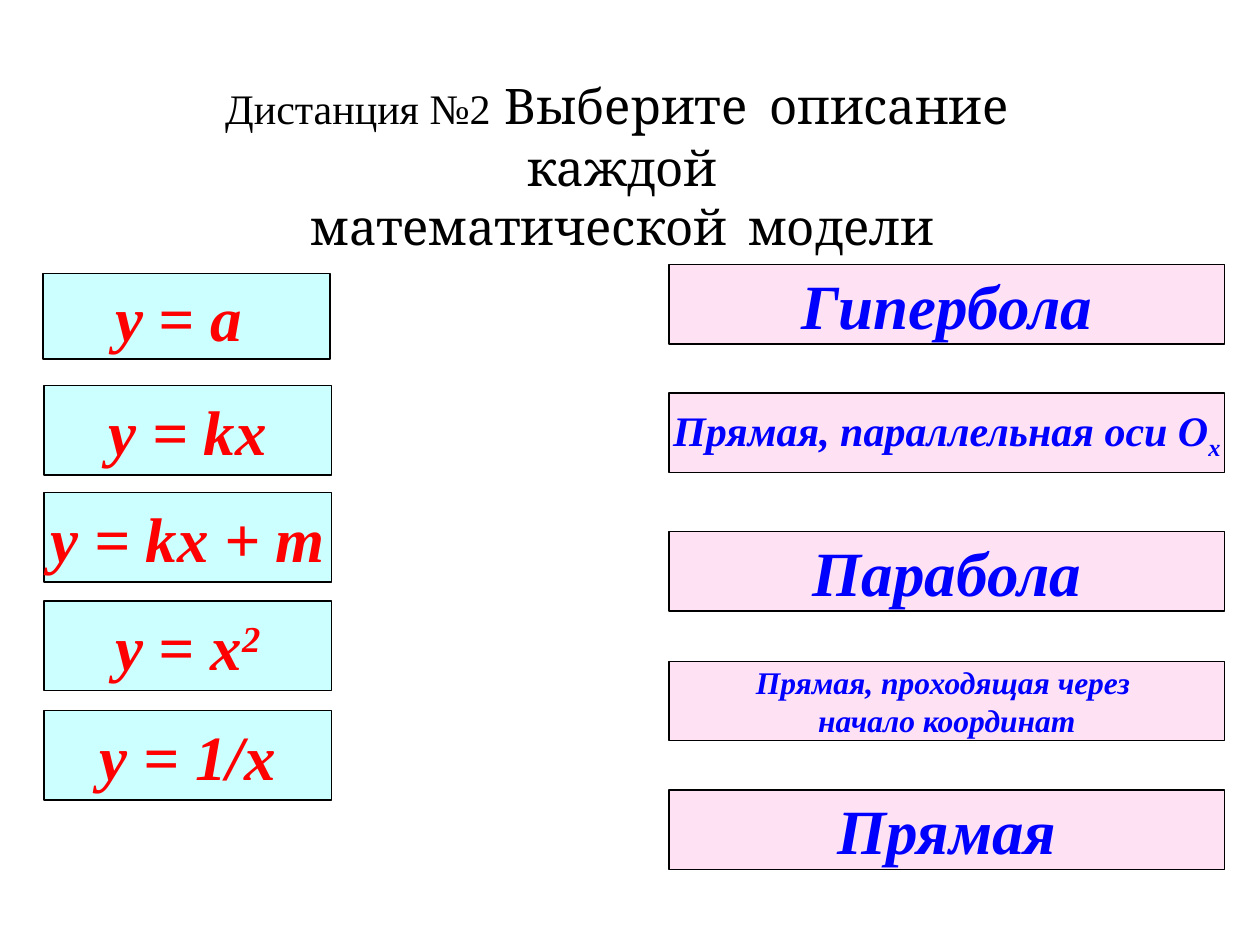
from pptx import Presentation
from pptx.dml.color import RGBColor
from pptx.enum.shapes import MSO_SHAPE
from pptx.enum.text import MSO_ANCHOR, MSO_AUTO_SIZE, PP_ALIGN
from pptx.util import Inches, Pt

BLACK = RGBColor(0x00, 0x00, 0x00)
RED = RGBColor(0xFF, 0x00, 0x00)
BLUE = RGBColor(0x00, 0x00, 0xFF)
CYAN = RGBColor(0xCC, 0xFF, 0xFF)
PINK = RGBColor(0xFE, 0xE2, 0xF4)
CREAM = RGBColor(0xEE, 0xEC, 0xE1)

SERIF, HEADING = "Times New Roman", "Cambria"
PLAIN = {"bold": False, "italic": False}
STRONG = {"bold": True, "italic": True}

# Formats of the runs
LABEL = {"name": SERIF, "size": Pt(24), **PLAIN}
GAP = {"name": HEADING, "size": Pt(36), **STRONG}
TASK = {"name": HEADING, "size": Pt(28), **PLAIN}


def add_run(p, text, color, fmt, baseline=0):
    r = p.add_run()
    r.text = text
    for key, value in fmt.items():
        setattr(r.font, key, value)
    r.font.color.rgb = color
    if baseline:
        r.font._element.set("baseline", str(baseline * 1000))


def add_title(s, left, top, width, height):
    sp = s.shapes.title
    sp.left, sp.top, sp.width, sp.height = map(Inches, (left, top, width, height))
    tf = sp.text_frame
    tf.word_wrap = True
    tf.auto_size = MSO_AUTO_SIZE.NONE
    tf.vertical_anchor = MSO_ANCHOR.TOP
    first, second = tf.paragraphs[0], tf.add_paragraph()
    first.alignment = second.alignment = PP_ALIGN.CENTER
    add_run(first, "Дистанция №2", BLACK, LABEL)
    add_run(first, " ", CREAM, GAP)
    add_run(first, "Выберите  описание  каждой", BLACK, TASK)
    add_run(second, "математической  модели", BLACK, TASK)


def add_card(s, box, fill, color, size, lines):
    """Each line is a list of (text, baseline) pairs."""
    sp = s.shapes.add_shape(MSO_SHAPE.RECTANGLE, *map(Inches, box))
    sp.shadow.inherit = False
    sp.fill.solid()
    sp.fill.fore_color.rgb = fill
    sp.line.color.rgb = BLACK
    sp.line.width = Pt(0.75)
    tf = sp.text_frame
    tf.word_wrap = False
    tf.vertical_anchor = MSO_ANCHOR.MIDDLE
    for i, line in enumerate(lines):
        p = tf.add_paragraph() if i else tf.paragraphs[0]
        p.alignment = PP_ALIGN.CENTER
        for text, baseline in line:
            add_run(p, text, color, {"name": SERIF, "size": Pt(size), **STRONG}, baseline)


def add_models(s, left, width):
    models = [
        (left - 0.01, 2.17, 0.68, [("у = а ", 0)]),
        (left, 3.06, 0.71, [("y = kx", 0)]),
        (left, 3.91, 0.71, [("y = kx + m", 0)]),
        (left, 4.77, 0.71, [("y = x", 0), ("2", 30)]),
        (left, 5.64, 0.71, [("y = 1/x", 0)]),
    ]
    for x, top, height, line in models:
        add_card(s, (x, top, width, height), CYAN, RED, 36, [line])


def add_descriptions(s, left, width, height):
    descriptions = [
        (2.1, 36, [[("Гипербола", 0)]]),
        (3.12, 24, [[("Прямая, параллельная оси О", 0), ("х", -25)]]),
        (4.22, 36, [[("Парабола", 0)]]),
        (5.25, 18, [[("Прямая, проходящая через ", 0)], [("начало координат", 0)]]),
        (6.27, 36, [[("Прямая", 0)]]),
    ]
    for top, size, lines in descriptions:
        add_card(s, (left, top, width, height), PINK, BLUE, size, lines)


def main():
    prs = Presentation()
    prs.slide_width, prs.slide_height = Inches(10), Inches(7.5)
    s = prs.slides.add_slide(prs.slide_layouts[5])  # title only
    add_title(s, 1.06, 0.44, 7.76, 1.18)
    add_models(s, 0.35, 2.28)
    add_descriptions(s, 5.31, 4.41, 0.63)
    prs.save("out.pptx")


if __name__ == "__main__":
    main()
